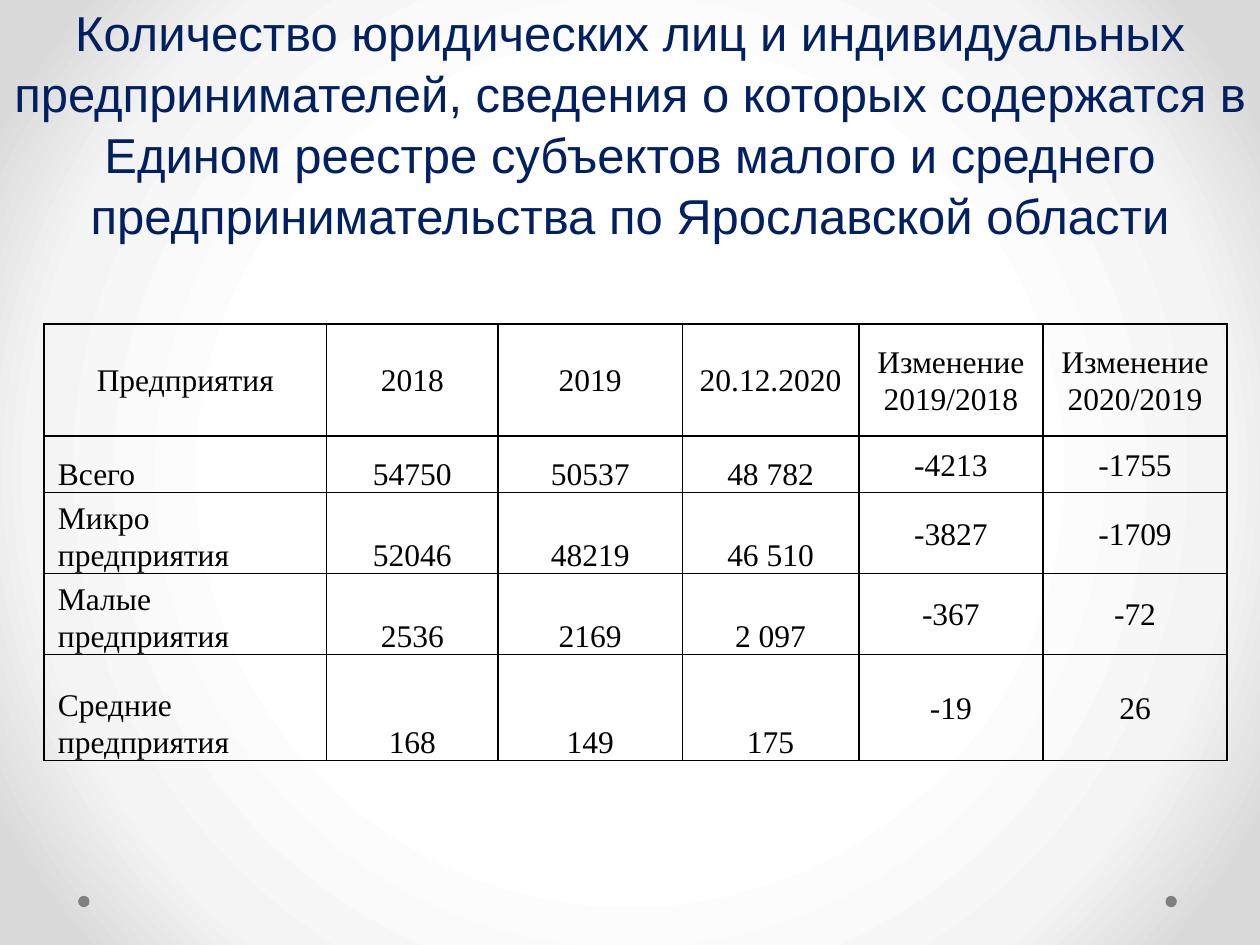
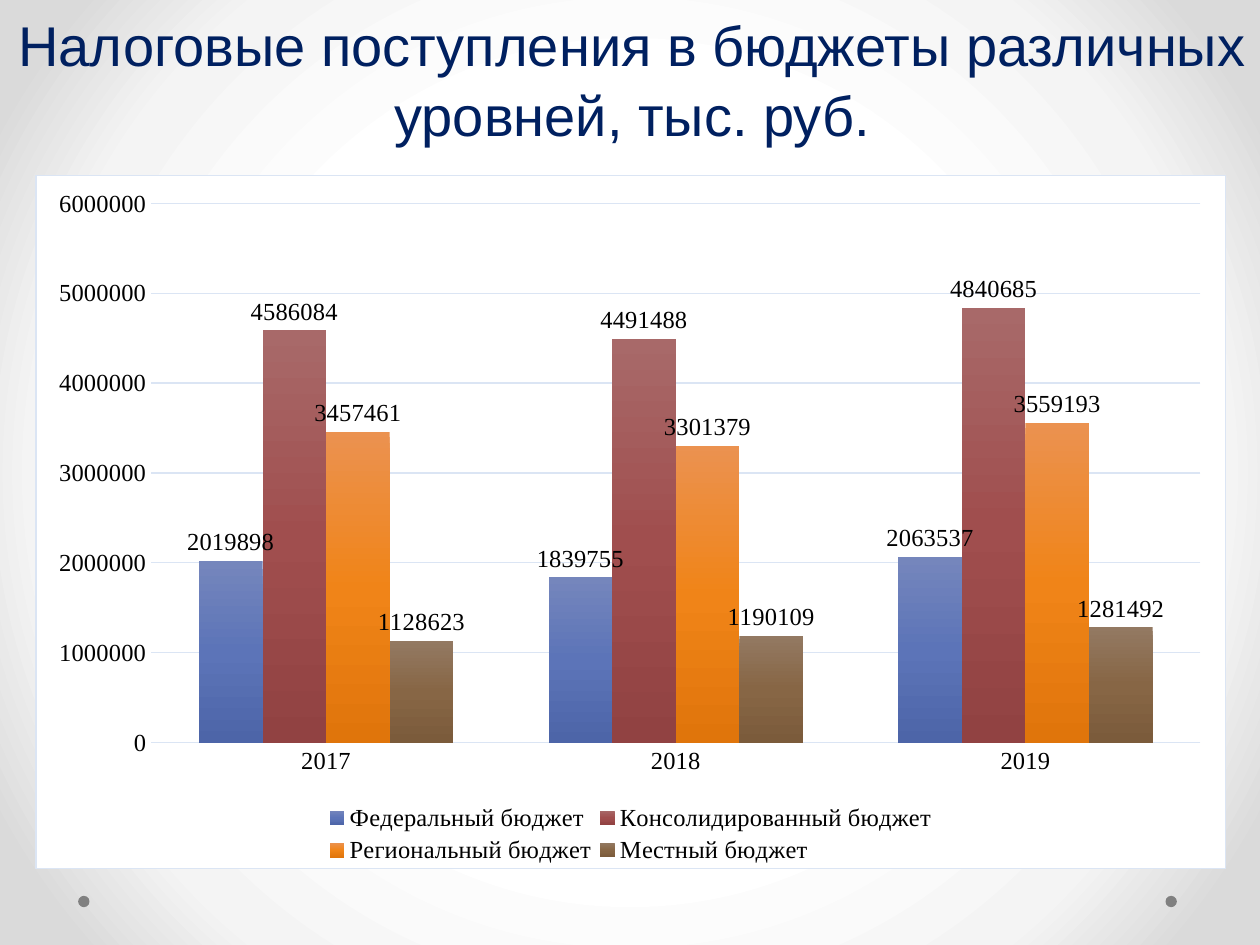
import pptx
import pptx.chart.data
import pptx.dml.color
import pptx.enum.chart
import pptx.enum.shapes
import pptx.enum.text
import pptx.oxml
import pptx.oxml.ns
import pptx.util

Inches = pptx.util.Inches
Pt = pptx.util.Pt
RGBColor = pptx.dml.color.RGBColor
ALIGN = pptx.enum.text.PP_ALIGN
ANCHOR = pptx.enum.text.MSO_ANCHOR
qn = pptx.oxml.ns.qn

NAVY = RGBColor(0x00, 0x20, 0x60)
BLACK = RGBColor(0x00, 0x00, 0x00)
WHITE = RGBColor(0xFF, 0xFF, 0xFF)
DOT_GREY = RGBColor(0x80, 0x80, 0x80)
PALE_BLUE = RGBColor(0xDB, 0xE5, 0xF4)
BACKDROP = ((0, WHITE), (50, WHITE), (76, RGBColor(0xF4, 0xF4, 0xF4)),
            (92, RGBColor(0xDA, 0xDA, 0xDA)), (100, RGBColor(0xDA, 0xDA, 0xDA)))
TITLE_FONT = "Arial"
BODY_FONT = "Times New Roman"

COLUMN_WIDTHS = (2.24, 1.36, 1.46, 1.4, 1.46, 1.46)
ROW_HEIGHTS = (0.89, 0.45, 0.45, 0.45, 0.84)
ENTERPRISES = (
    ("Предприятия", "2018", "2019", "20.12.2020", "Изменение 2019/2018", "Изменение 2020/2019"),
    ("Всего", "54750", "50537", "48 782", "-4213", "-1755"),
    ("Микро предприятия", "52046", "48219", "46 510", "-3827", "-1709"),
    ("Малые предприятия", "2536", "2169", "2 097", "-367", "-72"),
    ("Средние предприятия", "168", "149", "175", "-19", "26"),
)

YEARS = ("2017", "2018", "2019")
BUDGETS = (
    ("Федеральный бюджет", (2019898, 1839755, 2063537),
     (RGBColor(0x75, 0x86, 0xBC), RGBColor(0x5C, 0x74, 0xB8), RGBColor(0x4D, 0x65, 0xA8))),
    ("Консолидированный бюджет", (4586084, 4491488, 4840685),
     (RGBColor(0xA8, 0x69, 0x69), RGBColor(0xA0, 0x4E, 0x4E), RGBColor(0x91, 0x42, 0x42))),
    ("Региональный бюджет", (3457461, 3301379, 3559193),
     (RGBColor(0xEB, 0x92, 0x50), RGBColor(0xF0, 0x84, 0x18), RGBColor(0xE0, 0x75, 0x0B))),
    ("Местный бюджет", (1128623, 1190109, 1281492),
     (RGBColor(0x93, 0x79, 0x62), RGBColor(0x87, 0x66, 0x45), RGBColor(0x7B, 0x5B, 0x3B))),
)


def xml(tag, inner, attributes=""):
    return pptx.oxml.parse_xml(
        f'<{tag} {pptx.oxml.ns.nsdecls("a", "c")} {attributes}>{inner}</{tag}>')


def solid(color):
    return f'<a:solidFill><a:srgbClr val="{color}"/></a:solidFill>'


def replace_gradient(gradient, stops, direction):
    stop_list = "".join(f'<a:gs pos="{position * 1000}"><a:srgbClr val="{color}"/></a:gs>'
                        for position, color in stops)
    gradient.getparent().replace(
        gradient, xml("a:gradFill", f"<a:gsLst>{stop_list}</a:gsLst>{direction}", 'rotWithShape="1"'))


def paint_backdrop(master):
    master.background.fill.gradient()
    replace_gradient(
        master.element.find(".//" + qn("a:gradFill")), BACKDROP,
        '<a:path path="circle"><a:fillToRect l="50000" t="50000" r="50000" b="50000"/></a:path>')


def write(frame, text, font, size, color, align, spacing):
    paragraph = frame.paragraphs[0]
    paragraph.alignment = align
    paragraph.line_spacing = spacing
    run = paragraph.add_run()
    run.text = text
    run.font.name = font
    run.font.size = Pt(size)
    run.font.color.rgb = color


def add_titled_slide(prs, text, size, left, top, width, height):
    slide = prs.slides.add_slide(prs.slide_layouts[6])
    for dot_left in (0.62, 9.25):
        dot = slide.shapes.add_shape(pptx.enum.shapes.MSO_SHAPE.OVAL, Inches(dot_left),
                                     Inches(7.11), Inches(0.09), Inches(0.09))
        dot.shadow.inherit = False
        dot.fill.solid()
        dot.fill.fore_color.rgb = DOT_GREY
        dot.line.fill.background()
    title = slide.shapes.add_textbox(Inches(left), Inches(top), Inches(width), Inches(height))
    frame = title.text_frame
    frame.word_wrap = True
    frame.vertical_anchor = ANCHOR.BOTTOM
    write(frame, text, TITLE_FONT, size, NAVY, ALIGN.CENTER, 1.04)
    return slide


def outline_cell(cell):
    properties = cell.fill
    properties.background()
    cell_properties = cell._tc.get_or_add_tcPr()
    for position, side in enumerate(("a:lnL", "a:lnR", "a:lnT", "a:lnB")):
        cell_properties.insert(position, xml(side, solid(BLACK), f'w="{Pt(1)}"'))


def add_enterprise_table(slide, left, top, width, height):
    table = slide.shapes.add_table(len(ENTERPRISES), len(COLUMN_WIDTHS), Inches(left),
                                   Inches(top), Inches(width), Inches(height)).table
    for column, share in zip(table.columns, COLUMN_WIDTHS):
        column.width = Inches(width * share / sum(COLUMN_WIDTHS))
    for row, row_height in zip(table.rows, ROW_HEIGHTS):
        row.height = Inches(row_height)
    for r, values in enumerate(ENTERPRISES):
        for c, value in enumerate(values):
            cell = table.cell(r, c)
            cell.margin_left = cell.margin_right = Inches(0.11)
            cell.margin_top = cell.margin_bottom = 0
            cell.vertical_anchor = ANCHOR.MIDDLE if r == 0 or c > 3 else ANCHOR.BOTTOM
            align = ALIGN.LEFT if r and c == 0 else ALIGN.CENTER
            write(cell.text_frame, value, BODY_FONT, 18, BLACK, align, 1.07)
            outline_cell(cell)


def manual_layout(x, y, w, h, target=""):
    sizes = "".join(f'<c:{name} val="{value}"/>'
                    for name, value in (("x", x), ("y", y), ("w", w), ("h", h)))
    modes = '<c:xMode val="edge"/><c:yMode val="edge"/>'
    return xml("c:layout", f"<c:manualLayout>{target}{modes}{sizes}</c:manualLayout>")


def place_chart_parts(chart):
    plot_area = chart.element.find(".//" + qn("c:plotArea"))
    legend = chart.element.find(".//" + qn("c:legend"))
    for part in (plot_area, legend):
        for layout in part.findall(qn("c:layout")):
            part.remove(layout)
    plot_area.insert(0, manual_layout(0.097, 0.04, 0.882, 0.778, '<c:layoutTarget val="inner"/>'))
    legend.find(qn("c:legendPos")).addnext(manual_layout(0.24, 0.9, 0.52, 0.1))


def style_axes(chart):
    for axis in (chart.category_axis, chart.value_axis):
        axis.major_tick_mark = axis.minor_tick_mark = pptx.enum.chart.XL_TICK_MARK.NONE
    years, amounts = chart.category_axis, chart.value_axis
    amounts.has_major_gridlines = True
    for line in (years.format.line, amounts.major_gridlines.format.line):
        line.color.rgb = PALE_BLUE
        line.width = Pt(0.75)
    amounts.format.line.fill.background()
    amounts.minimum_scale = 0
    amounts.maximum_scale = 6000000
    amounts.major_unit = 1000000


def add_budget_chart(slide, left, top, width, height):
    data = pptx.chart.data.CategoryChartData()
    data.categories = YEARS
    for name, amounts, _ in BUDGETS:
        data.add_series(name, amounts)
    chart = slide.shapes.add_chart(
        pptx.enum.chart.XL_CHART_TYPE.COLUMN_CLUSTERED, Inches(left), Inches(top),
        Inches(width), Inches(height), data).chart
    chart.has_title = False
    chart.font.name = BODY_FONT
    chart.font.size = Pt(14)
    chart.font.color.rgb = BLACK
    chart.has_legend = True
    chart.legend.position = pptx.enum.chart.XL_LEGEND_POSITION.BOTTOM
    chart.legend.include_in_layout = False
    style_axes(chart)

    plot = chart.plots[0]
    plot.gap_width = 150
    plot.overlap = 0
    plot.vary_by_categories = False
    for series, (_, _, shades) in zip(plot.series, BUDGETS):
        series.format.fill.gradient()
        replace_gradient(series.format.element.find(".//" + qn("a:gradFill"))
                         if hasattr(series.format, "element")
                         else series._element.find(".//" + qn("a:gradFill")),
                         zip((0, 50, 100), shades), '<a:lin ang="5400000" scaled="0"/>')
        series.data_labels.show_value = True
        series.data_labels.position = pptx.enum.chart.XL_LABEL_POSITION.OUTSIDE_END

    frame = solid(WHITE) + f'<a:ln w="{Pt(0.75)}">{solid(PALE_BLUE)}</a:ln>'
    chart.element.find(qn("c:chart")).addnext(xml("c:spPr", frame))
    place_chart_parts(chart)


def main():
    prs = pptx.Presentation()
    prs.slide_width = Inches(10)
    prs.slide_height = Inches(7.5)
    paint_backdrop(prs.slide_master)
    enterprises = add_titled_slide(
        prs, "Количество юридических лиц и индивидуальных предпринимателей, сведения о которых "
        "содержатся в Едином реестре субъектов малого и среднего предпринимательства "
        "по Ярославской области", 28, 0, 0.99, 10, 1)
    add_enterprise_table(enterprises, 0.35, 2.57, 9.39, 3.43)
    taxes = add_titled_slide(
        prs, "Налоговые поступления в бюджеты различных уровней, тыс. руб.", 32,
        0.02, -0.03, 10, 1.25)
    add_budget_chart(taxes, 0.28, 1.39, 9.45, 5.51)
    prs.save("out.pptx")


if __name__ == "__main__":
    main()
